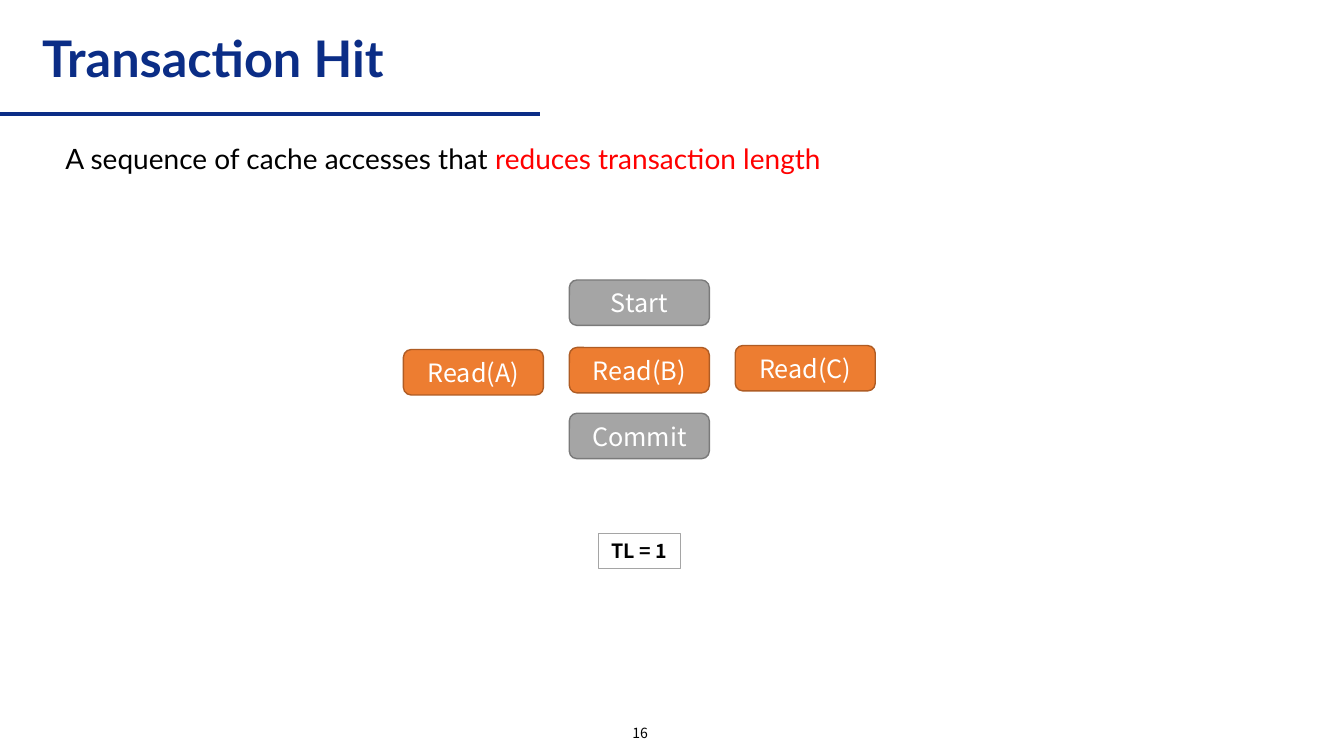
from pptx import Presentation
from pptx.dml.color import RGBColor
from pptx.enum.shapes import MSO_CONNECTOR, MSO_SHAPE
from pptx.enum.text import MSO_ANCHOR, PP_ALIGN
from pptx.oxml.ns import qn
from pptx.util import Pt

STRAIGHT = MSO_CONNECTOR.STRAIGHT
RECT, ROUNDED = MSO_SHAPE.RECTANGLE, MSO_SHAPE.ROUNDED_RECTANGLE
TOP, MIDDLE = MSO_ANCHOR.TOP, MSO_ANCHOR.MIDDLE
LEFT, CENTER = PP_ALIGN.LEFT, PP_ALIGN.CENTER

NAVY = RGBColor(0x0B, 0x2D, 0x86)
BLACK = RGBColor(0, 0, 0)
WHITE = RGBColor(0xFF, 0xFF, 0xFF)
RED = RGBColor(0xFF, 0, 0)
GRAY = RGBColor(0xA5, 0xA5, 0xA5)
DARK_GRAY = RGBColor(0x7A, 0x7A, 0x7A)
ORANGE = RGBColor(0xED, 0x7D, 0x31)
DARK_ORANGE = RGBColor(0xAF, 0x5C, 0x24)

LATO, NOTO = "Lato", "Noto Sans CJK KR"


def write(sp, runs, size, font, bold=False, align=LEFT, anchor=MIDDLE, wrap=True):
    """Fill a shape with one paragraph of (text, colour) runs."""
    tf = sp.text_frame
    tf.word_wrap = wrap
    tf.vertical_anchor = anchor
    p = tf.paragraphs[0]
    p.alignment = align
    for text, color in runs:
        r = p.add_run()
        r.text = text
        r.font.size = Pt(size)
        r.font.name = font
        r.font.bold = bold
        r.font.color.rgb = color
    return p


def add_text(s, box, runs, size, font, **style):
    sp = s.shapes.add_textbox(*map(Pt, box))
    return write(sp, runs, size, font, **style)


def add_box(s, kind, box, fill, line):
    sp = s.shapes.add_shape(kind, *map(Pt, box))
    sp.shadow.inherit = False
    sp.fill.solid()
    sp.fill.fore_color.rgb = fill
    sp.line.color.rgb = line
    sp.line.width = Pt(1)
    return sp


def add_header(s, x, y, w, h):
    # Rule from the slide edge, then the title above it
    rule_y = Pt(y + h + 11)
    rule = s.shapes.add_connector(STRAIGHT, 0, rule_y, Pt(386), rule_y)
    rule.line.color.rgb = NAVY
    rule.line.width = Pt(3)
    sp_pr = rule._element.spPr
    sp_pr.append(sp_pr.makeelement(qn("a:effectLst"), {}))
    p = add_text(s, (x, y, w, h), [("Transaction Hit", NAVY)], 36, LATO, bold=True)
    p.line_spacing = 0.9


def add_transaction(s, x, y, w, h):
    # Three columns of operations, reads side by side in the middle
    box_w, box_h = 100, 32.4
    step = (w - box_w) / 2
    operations = [
        ("Start", 1, 0, GRAY, DARK_GRAY),
        ("Read(B)", 1, 48.2, ORANGE, DARK_ORANGE),
        ("Read(C)", 2, 46.8, ORANGE, DARK_ORANGE),
        ("Read(A)", 0, 49.7, ORANGE, DARK_ORANGE),
        ("Commit", 1, h - box_h, GRAY, DARK_GRAY),
    ]
    for label, column, drop, fill, line in operations:
        box = (x + column * step, y + drop, box_w, box_h)
        sp = add_box(s, ROUNDED, box, fill, line)
        write(sp, [(label, WHITE)], 18, NOTO, align=CENTER)


def add_length_label(s, x, y, w, h):
    sp = add_box(s, RECT, (x, y, w, h), WHITE, GRAY)
    write(sp, [("TL = 1", BLACK)], 14, NOTO, bold=True, align=CENTER, wrap=False)


def main():
    prs = Presentation()
    prs.slide_width, prs.slide_height = Pt(960), Pt(540)
    s = prs.slides.add_slide(prs.slide_layouts[6])

    add_header(s, 23, 17.3, 660, 53.3)
    # Slide number
    add_text(s, (349.2, 512, 216, 23), [("16", BLACK)], 10, NOTO, align=CENTER)
    # Definition
    definition = [
        ("A sequence of cache accesses that ", BLACK),
        ("reduces transaction length", RED),
    ]
    add_text(s, (39.6, 97.2, 874, 32.4), definition, 20, LATO, anchor=TOP)
    add_transaction(s, 288.2, 200, 337, 127.6)
    add_length_label(s, 427.6, 381.2, 58.4, 24.8)

    prs.save("out.pptx")


if __name__ == "__main__":
    main()
